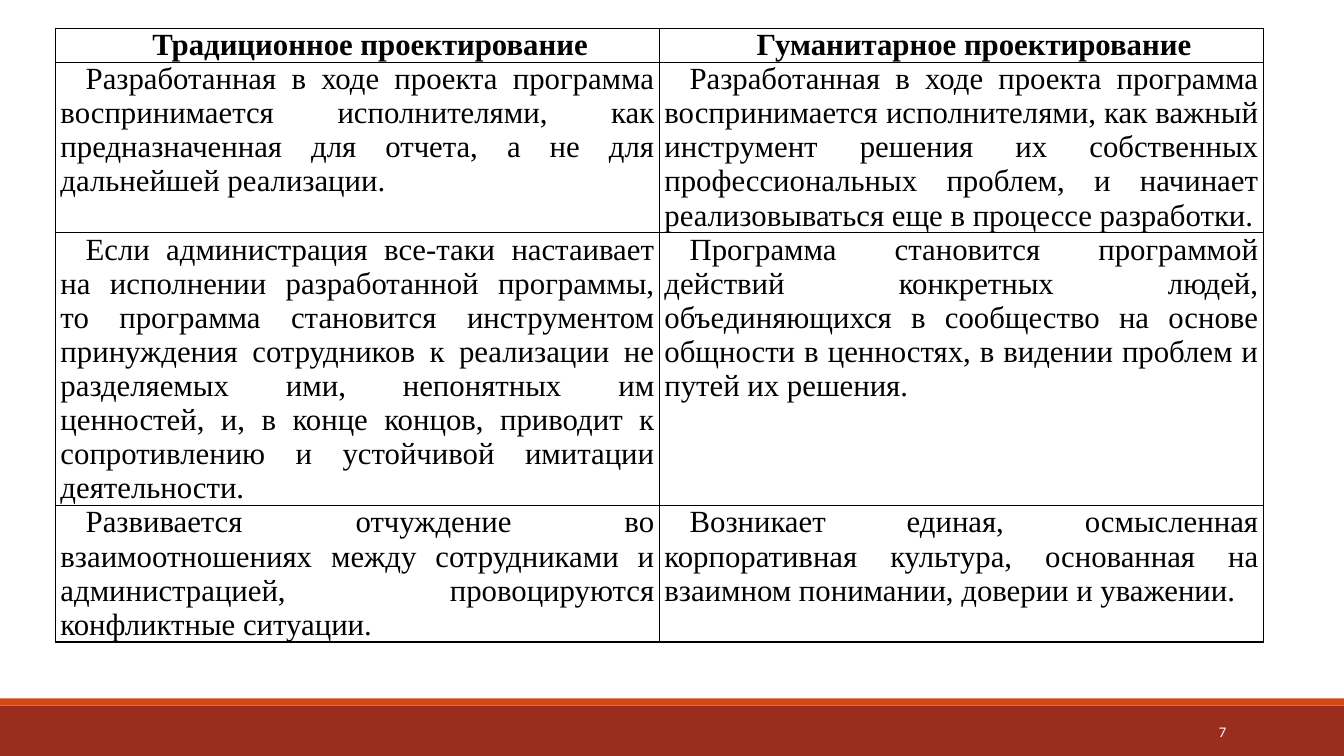
"""Build a slide comparing traditional and humanitarian project design."""
from lxml import etree
from pptx import Presentation
from pptx.dml.color import RGBColor
from pptx.enum.shapes import MSO_SHAPE
from pptx.enum.text import MSO_ANCHOR, PP_ALIGN
from pptx.oxml.ns import qn
from pptx.util import Inches, Pt

RECTANGLE = MSO_SHAPE.RECTANGLE
MIDDLE = MSO_ANCHOR.MIDDLE
CENTER, JUSTIFY, RIGHT = PP_ALIGN.CENTER, PP_ALIGN.JUSTIFY, PP_ALIGN.RIGHT

HEADINGS = ("Традиционное проектирование", "Гуманитарное проектирование")
COMPARISONS = [
    ("Разработанная в ходе проекта программа воспринимается исполнителями, "
     "как предназначенная для отчета, а не для дальнейшей реализации.",
     "Разработанная в ходе проекта программа воспринимается исполнителями, "
     "как важный инструмент решения их собственных профессиональных проблем, "
     "и начинает реализовываться еще в процессе разработки."),
    ("Если администрация все-таки настаивает на исполнении разработанной программы, "
     "то программа становится инструментом принуждения сотрудников к реализации "
     "не разделяемых ими, непонятных им ценностей, и, в конце концов, приводит "
     "к сопротивлению и устойчивой имитации деятельности.",
     "Программа становится программой действий конкретных людей, объединяющихся "
     "в сообщество на основе общности в ценностях, в видении проблем и путей их решения."),
    ("Развивается отчуждение во взаимоотношениях между сотрудниками "
     "и администрацией, провоцируются конфликтные ситуации.",
     "Возникает единая, осмысленная корпоративная культура, основанная "
     "на взаимном понимании, доверии и уважении."),
]
PAGE_NUMBER = "7"
COLORS = {"footer": "9B2D1F", "stripe": "D34817", "ink": "000000", "page": "FFFFFF"}

WIDTH, HEIGHT = 13.33, 7.5
FOOTER_TOP, STRIPE_HEIGHT = 7, 0.07
TABLE_LEFT, TABLE_TOP, COLUMN_WIDTH = 0.55, 0.28, 5.99
LINE_HEIGHT = 0.33
ROW_LINES = (1, 5, 8, 4)


def write(frame, text, *, size, font, color, align, bold=False, indent=0):
    """Put one formatted paragraph into a text frame."""
    paragraph = frame.paragraphs[0]
    paragraph.alignment = align
    if indent:
        properties = paragraph._p.get_or_add_pPr()
        properties.set("marL", "0")
        properties.set("indent", str(Inches(indent)))
    run = paragraph.add_run()
    run.text = text
    run.font.size, run.font.name, run.font.bold = Pt(size), font, bold
    run.font.color.rgb = RGBColor.from_string(COLORS[color])


def add_band(slide, top, height, color):
    """Draw a full-width band."""
    band = slide.shapes.add_shape(RECTANGLE, 0, Inches(top), Inches(WIDTH), Inches(height))
    band.shadow.inherit = False
    band.fill.solid()
    band.fill.fore_color.rgb = RGBColor.from_string(COLORS[color])
    band.line.fill.background()


def add_borders(cell):
    """Outline all four sides of a cell."""
    properties = cell._tc.get_or_add_tcPr()
    for side in ("lnL", "lnR", "lnT", "lnB"):
        border = etree.SubElement(properties, qn(f"a:{side}"), w=str(Pt(1)))
        fill = etree.SubElement(border, qn("a:solidFill"))
        etree.SubElement(fill, qn("a:srgbClr"), val=COLORS["ink"])


def add_comparison(slide):
    """Lay out the headings and the compared statements."""
    rows = [HEADINGS, *COMPARISONS]
    table = slide.shapes.add_table(
        len(rows), len(HEADINGS), Inches(TABLE_LEFT), Inches(TABLE_TOP),
        Inches(COLUMN_WIDTH * len(HEADINGS)), Inches(LINE_HEIGHT * sum(ROW_LINES))).table
    for column in table.columns:
        column.width = Inches(COLUMN_WIDTH)
    for r, (statements, lines) in enumerate(zip(rows, ROW_LINES)):
        table.rows[r].height = Inches(LINE_HEIGHT * lines)
        heading = r == 0
        for c, statement in enumerate(statements):
            cell = table.cell(r, c)
            cell.margin_left = cell.margin_right = Inches(0.05)
            cell.margin_top = cell.margin_bottom = 0
            add_borders(cell)
            cell.fill.background()
            write(cell.text_frame, statement, size=22, font="Times New Roman", color="ink",
                  align=CENTER if heading else JUSTIFY, bold=heading, indent=0.25)


def main():
    """Assemble and save the slide."""
    deck = Presentation()
    deck.slide_width, deck.slide_height = Inches(WIDTH), Inches(HEIGHT)
    slide = deck.slides.add_slide(deck.slide_layouts[6])
    add_band(slide, FOOTER_TOP, HEIGHT - FOOTER_TOP, "footer")
    add_band(slide, FOOTER_TOP - STRIPE_HEIGHT, STRIPE_HEIGHT, "stripe")
    add_comparison(slide)
    number = slide.shapes.add_textbox(Inches(10.83), Inches(7.06), Inches(1.43), Inches(0.4))
    number.text_frame.word_wrap = True
    number.text_frame.vertical_anchor = MIDDLE
    write(number.text_frame, PAGE_NUMBER, size=10.5, font="Calibri", color="page", align=RIGHT)
    deck.save("out.pptx")


if __name__ == "__main__":
    main()
